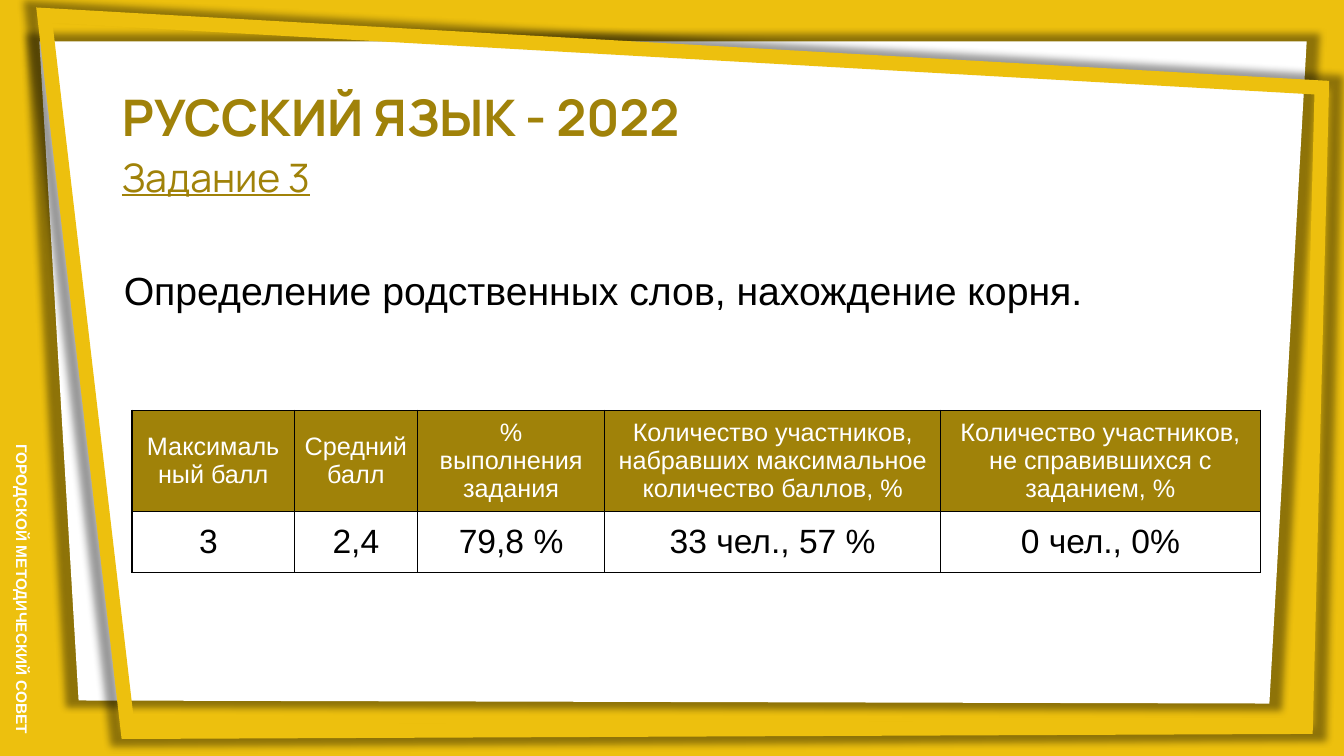
from lxml.etree import SubElement
from pptx import Presentation
from pptx.dml.color import RGBColor
from pptx.enum.text import MSO_ANCHOR, PP_ALIGN
from pptx.oxml import parse_xml
from pptx.oxml.ns import nsdecls, qn
from pptx.util import Pt

PX = 9144  # 100 px to the inch
GOLD, OLIVE, WHITE, BLACK = "EDC00E", "A08209", "FFFFFF", "000000"


def paint(fill, color):
    fill.solid()
    fill.fore_color.rgb = RGBColor.from_string(color)


def write(frame, text, size, font, color, align):
    frame.text = text
    frame.word_wrap = True
    para = frame.paragraphs[0]
    para.alignment = align
    face = para.runs[0].font
    face.size, face.name = Pt(size), font
    paint(face.fill, color)
    return face


deck = Presentation()
deck.slide_width, deck.slide_height = 1333 * PX, 750 * PX
slide = deck.slides.add_slide(deck.slide_layouts[6])
paint(slide.background.fill, GOLD)
shapes = slide.shapes

# Side label
label = shapes.add_textbox(-145 * PX, 564 * PX, 330 * PX, 41 * PX)
label.rotation = 90
label.text_frame.margin_top = label.text_frame.margin_bottom = 10 * PX
face = write(label.text_frame, "ГОРОДСКОЙ МЕТОДИЧЕСКИЙ СОВЕТ", 11, "Arial", WHITE, PP_ALIGN.CENTER)
face.bold = True

# White sheet and tilted gold frame, each with a soft halo
sheet = [(39, 41), (1296, 41), (1259, 698), (78, 695)]
frame = [(44, 15), (127, 726), (1295, 721), (1311, 87)]
for points in (sheet, frame):
    pen = shapes.build_freeform(*points[0], scale=PX)
    pen.add_line_segments(points[1:], close=True)
    shape = pen.convert_to_shape()
    if points is sheet:
        paint(shape.fill, WHITE)
        shape.line.fill.background()
    else:
        shape.fill.background()
        paint(shape.line.fill, GOLD)
        shape.line.width = Pt(10.25)
        SubElement(shape.line._get_or_add_ln(), qn("a:miter"), lim="800000")
    shape._element.spPr.append(parse_xml(
        f'<a:effectLst {nsdecls("a")}><a:outerShdw blurRad="{Pt(5)}" dist="0" dir="0" '
        'sx="102000" sy="102000" algn="ctr" rotWithShape="0"><a:srgbClr val="000000">'
        '<a:alpha val="40000"/></a:srgbClr></a:outerShdw></a:effectLst>'))

# Title, task and topic
lines = [
    ("РУССКИЙ ЯЗЫК - 2022", 111, 81, 670, 36, "Manrope", OLIVE, PP_ALIGN.LEFT),
    ("Задание 3", 111, 147, 287, 28, "Manrope", OLIVE, PP_ALIGN.LEFT),
    ("Определение родственных слов, нахождение корня.", 113, 259, 1154, 28, "Arial", BLACK,
     PP_ALIGN.JUSTIFY),
]
faces = []
for text, left, top, width, *style in lines:
    box = shapes.add_textbox(left * PX, top * PX, width * PX, 71 * PX)
    faces.append(write(box.text_frame, text, *style))
faces[0].bold = True
faces[1].underline = True

# Results table
rows = [
    ["Максимальный балл", "Средний балл", "% выполнения задания",
     "Количество участников, набравших максимальное количество баллов, %",
     "Количество участников, не справившихся с заданием, %"],
    ["3 ", "2,4", "79,8 %", "33 чел., 57 %", "0 чел., 0%"],
]
widths, heights = [161, 122, 186, 333, 317], [70, 61]
looks = [(18, WHITE, OLIVE), (24, BLACK, WHITE)]
table = shapes.add_table(2, 5, 131 * PX, 407 * PX, sum(widths) * PX, sum(heights) * PX).table
for col, width in zip(table.columns, widths):
    col.width = width * PX
for r, (size, ink, back) in enumerate(looks):
    table.rows[r].height = heights[r] * PX
    for c, text in enumerate(rows[r]):
        cell = table.cell(r, c)
        write(cell.text_frame, text, size, "Arial", ink, PP_ALIGN.CENTER)
        cell.vertical_anchor = MSO_ANCHOR.MIDDLE
        props = cell._tc.get_or_add_tcPr()
        for side in ("lnL", "lnR", "lnT", "lnB"):
            edge = SubElement(props, qn("a:" + side), w=str(Pt(1)))
            SubElement(SubElement(edge, qn("a:solidFill")), qn("a:srgbClr"), val=BLACK)
        paint(cell.fill, back)

deck.save("out.pptx")
